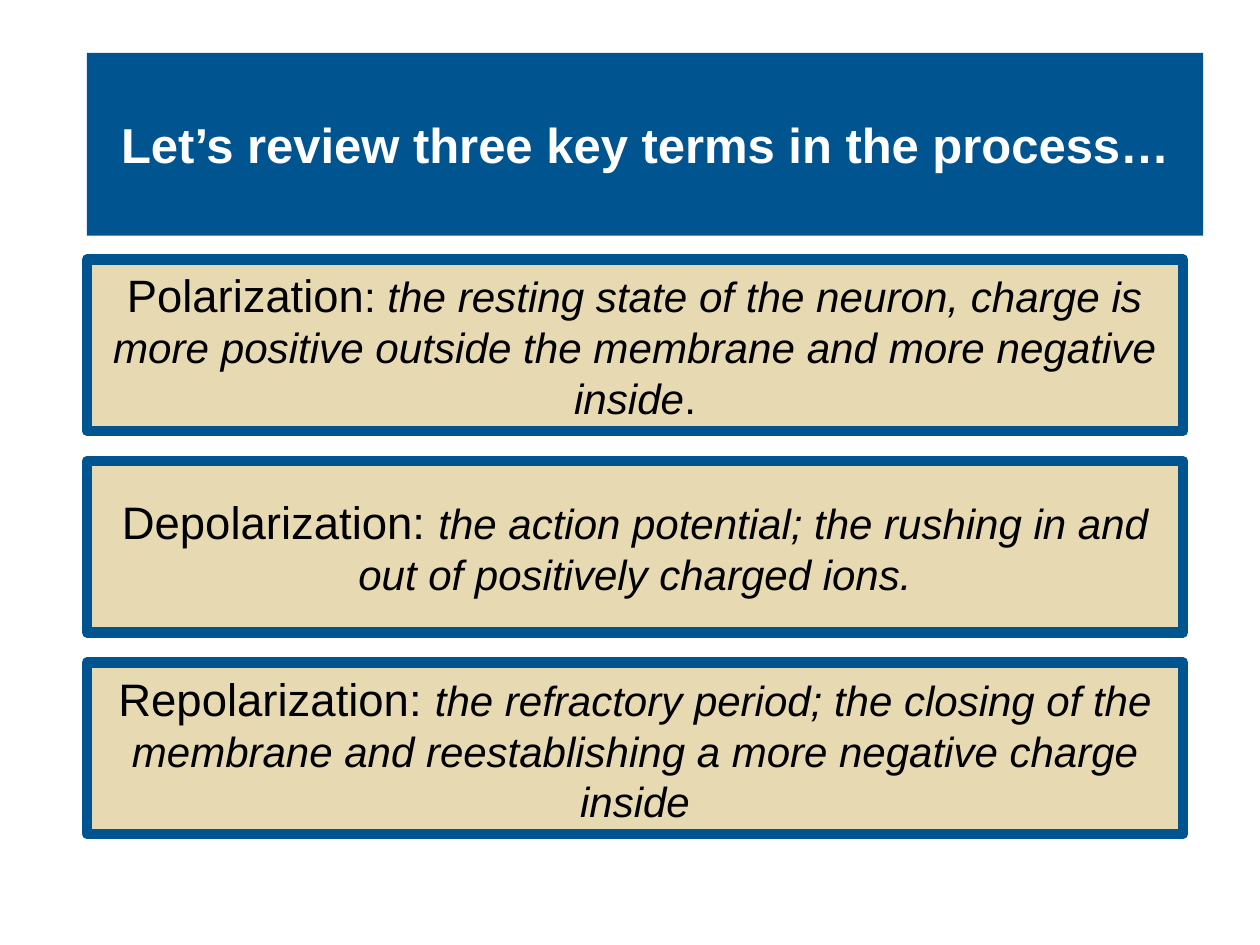
import pptx
import pptx.util
import pptx.dml.color
import pptx.enum.shapes
import pptx.enum.text

Inches, Pt = pptx.util.Inches, pptx.util.Pt

COLORS = {"blue": "005490", "sand": "E7D9B1", "white": "FFFFFF", "black": "000000"}

# Content: each run is (text, size, bold, italic)
TITLE = [("Let’s review three key terms in the process…", 28, True, False)]
TERMS = [
    [("Polarization", 25.9, False, False),
     (": ", 24.1, False, False),
     ("the resting state of the neuron, charge is more positive outside "
      "the membrane and more negative inside", 24.1, False, True),
     (".", 24.1, False, False)],
    [("Depolarization: ", 26, False, False),
     ("the action potential; the rushing in and out of positively "
      "charged ions.", 24, False, True)],
    [("Repolarization: ", 26, False, False),
     ("the refractory period; the closing of the membrane and "
      "reestablishing a more negative charge inside", 24, False, True)],
]

# Layout in inches
LEFT, TOP, STEP = 0.69, 2.06, 1.6


def color(name):
    return pptx.dml.color.RGBColor.from_string(COLORS[name])


def add_box(slide, place, runs, fill, ink, edge=None):
    box = slide.shapes.add_shape(
        pptx.enum.shapes.MSO_SHAPE.RECTANGLE, *map(Inches, place))
    box.shadow.inherit = False
    box.fill.solid()
    box.fill.fore_color.rgb = color(fill)
    if edge:
        box.line.color.rgb = color(edge)
        box.line.width = Pt(6)
    else:
        box.line.fill.background()

    frame = box.text_frame
    frame.word_wrap = True
    frame.vertical_anchor = pptx.enum.text.MSO_ANCHOR.MIDDLE
    para = frame.paragraphs[0]
    para.alignment = pptx.enum.text.PP_ALIGN.CENTER
    for text, size, bold, italic in runs:
        run = para.add_run()
        run.text = text
        font = run.font
        font.name, font.size = "Arial", Pt(size)
        font.bold, font.italic = bold, italic
        font.color.rgb = color(ink)


def main():
    deck = pptx.Presentation()
    deck.slide_width, deck.slide_height = Inches(10), Inches(7.5)
    slide = deck.slides.add_slide(deck.slide_layouts[6])

    # Title banner
    add_box(slide, (LEFT, 0.42, 8.86, 1.45), TITLE, "blue", "white")

    # Stacked term boxes
    for row, runs in enumerate(TERMS):
        place = (LEFT, TOP + row * STEP, 8.7, 1.36)
        add_box(slide, place, runs, "sand", "black", "blue")

    deck.save("out.pptx")


if __name__ == "__main__":
    main()
